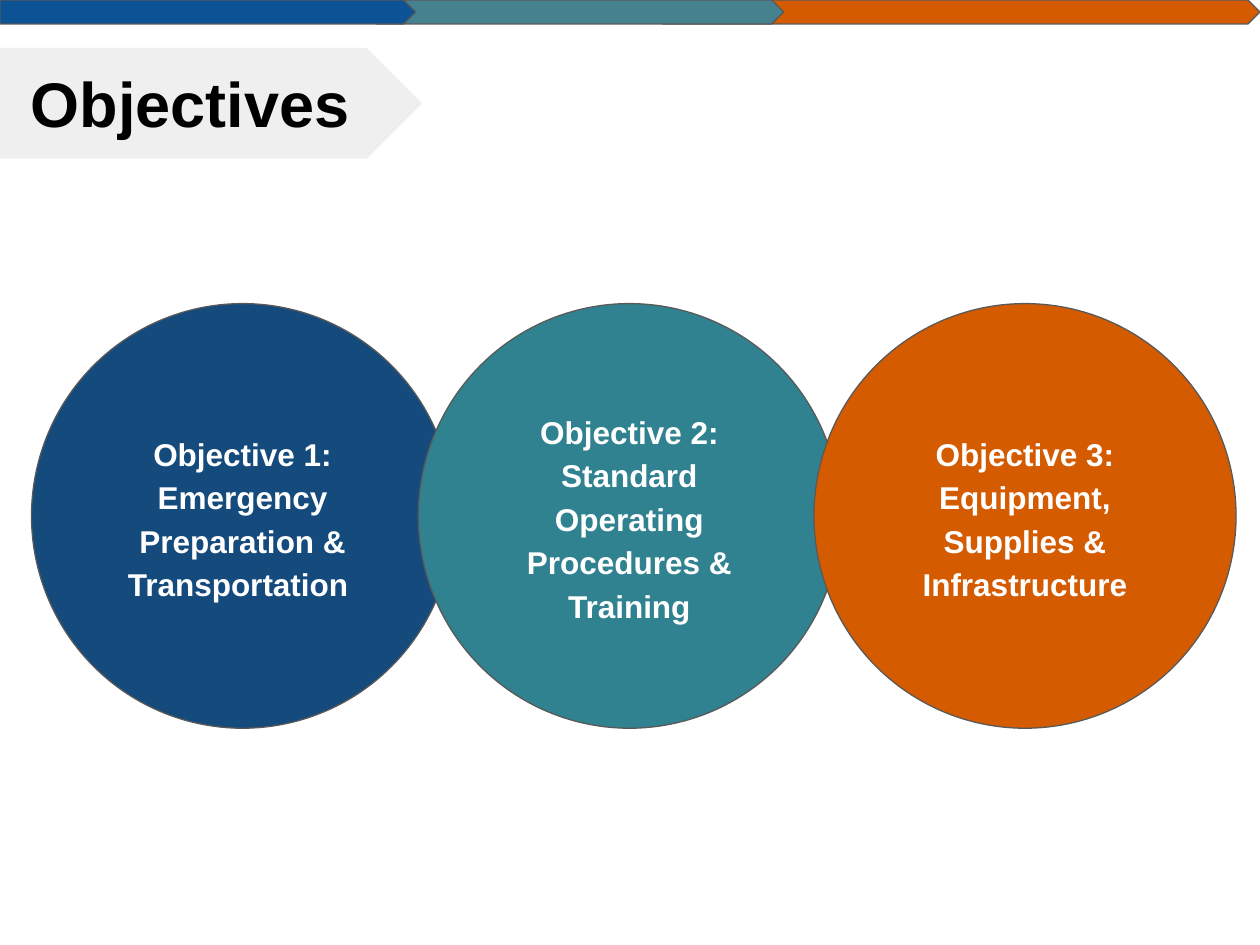
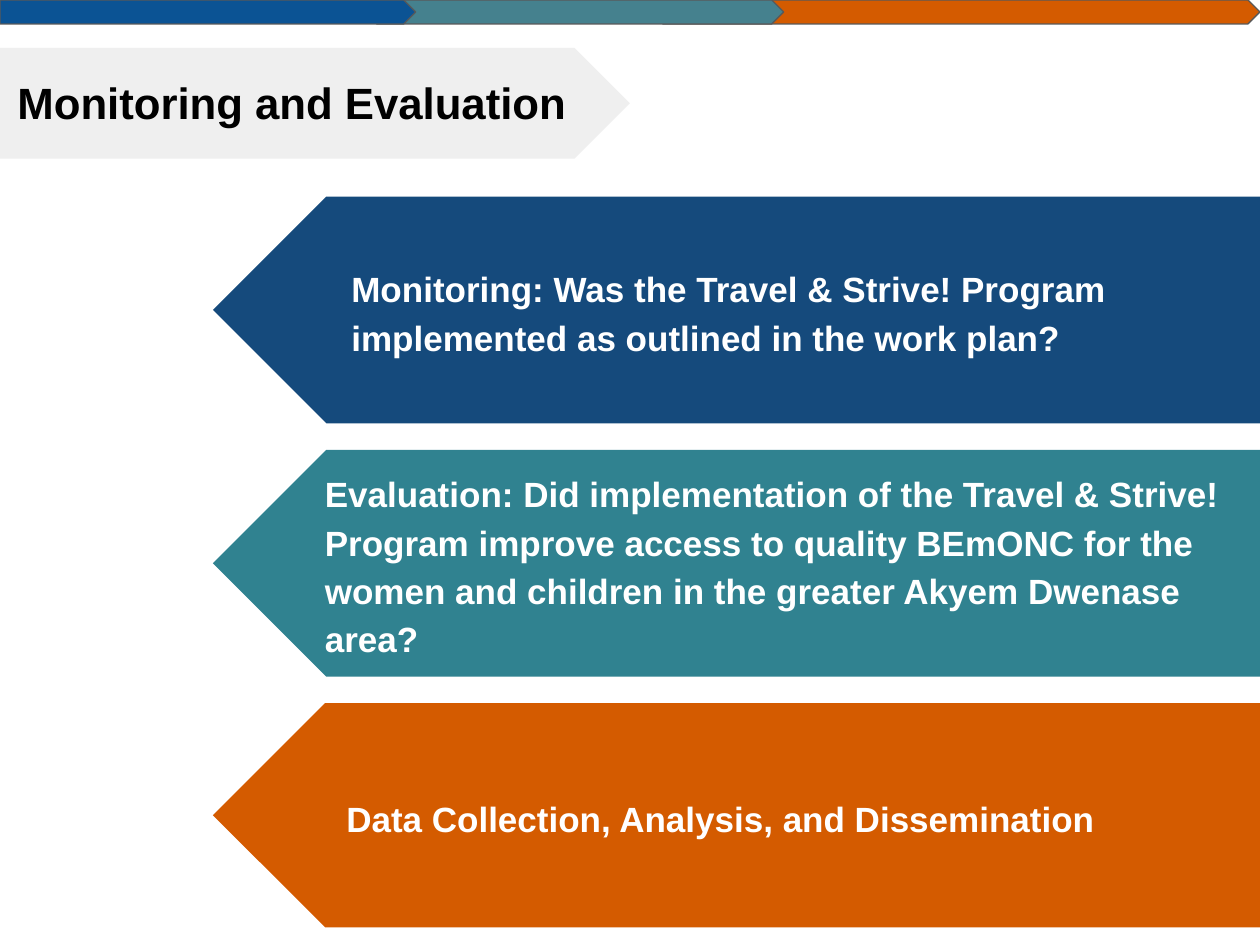
from pptx import Presentation
from pptx.dml.color import RGBColor as RGB
from pptx.enum.shapes import MSO_SHAPE as Kind
from pptx.enum.text import MSO_ANCHOR as Anchor, PP_ALIGN as Align
from pptx.util import Emu, Pt

SCALE = 9144
WIDE, HIGH = 1000, 750
INSET = 10
FONT = "Arial"

WHITE = RGB(0xFF, 0xFF, 0xFF)
BLACK = RGB(0x00, 0x00, 0x00)
PALE = RGB(0xEF, 0xEF, 0xEF)
EDGE = RGB(0x59, 0x59, 0x59)
NAVY = RGB(0x15, 0x4A, 0x7C)
TEAL = RGB(0x30, 0x82, 0x90)
RUST = RGB(0xD4, 0x5B, 0x00)
BLUE = RGB(0x0B, 0x53, 0x94)
SEA = RGB(0x45, 0x81, 0x8E)

STRIP = [
    (Kind.PENTAGON, 526, 474, RUST),
    (Kind.CHEVRON, 299, 323, SEA),
    (Kind.PENTAGON, 0, 330, BLUE),
]
GOALS = [
    (25, NAVY, "Objective 1: Emergency Preparation & Transportation "),
    (332, TEAL, "Objective 2: Standard Operating Procedures & Training"),
    (646, RUST, "Objective 3: Equipment, Supplies & Infrastructure"),
]
CHECKS = [
    (180, 100, NAVY, "Monitoring: Was the Travel & Strive! Program "
     "implemented as outlined in the work plan?"),
    (180, 79, TEAL, "Evaluation: Did implementation of the Travel & Strive! "
     "Program improve access to quality BEmONC for the women and children "
     "in the greater Akyem Dwenase area?"),
    (178, 96, RUST, "Data Collection, Analysis, and Dissemination"),
]


def px(*sizes):
    return [Emu(size * SCALE) for size in sizes]


def draw(shapes, kind, box, fill, line=None):
    shape = shapes.add_shape(kind, *px(*box))
    shape.shadow.inherit = False
    shape.fill.solid()
    shape.fill.fore_color.rgb = fill
    if line is None:
        shape.line.fill.background()
    else:
        shape.line.color.rgb = line
        shape.line.width = Pt(0.75)
    return shape


def write(shape, text, size=20, color=WHITE, align=Align.LEFT, space=1.15):
    frame = shape.text_frame
    frame.word_wrap = True
    frame.vertical_anchor = Anchor.MIDDLE
    inset, = px(INSET)
    frame.margin_left = frame.margin_right = inset
    frame.margin_top = frame.margin_bottom = inset
    para = frame.paragraphs[0]
    para.alignment = align
    para.line_spacing = space
    run = para.add_run()
    run.text = text
    run.font.name = FONT
    run.font.size = Pt(size)
    run.font.bold = True
    run.font.color.rgb = color


def label(shapes, box, text, **style):
    write(shapes.add_textbox(*px(*box)), text, **style)


def banner(shapes, box, text, width, **style):
    left, top, wide, high = box
    draw(shapes, Kind.PENTAGON, box, PALE)
    label(shapes, (left + 4, top - 1, width, high), text,
          color=BLACK, space=1.0, **style)


def strip(shapes, box):
    left, top, _, high = box
    for kind, shift, wide, fill in STRIP:
        draw(shapes, kind, (left + shift, top, wide, high), fill, EDGE)


def circles(shapes, box):
    start, top, wide, high = box
    for shift, fill, text in GOALS:
        spot = (start + shift, top, wide, high)
        disc = draw(shapes, Kind.OVAL, spot, fill, EDGE)
        write(disc, text, size=18, align=Align.CENTER)


def arrows(shapes, box, pitch):
    left, top, wide = box
    for row, (high, shift, fill, text) in enumerate(CHECKS):
        level = top + row * pitch
        group = shapes.add_group_shape().shapes
        arrow = draw(group, Kind.PENTAGON, (left, level, wide, high), fill)
        arrow.rotation = 180
        label(group, (left + shift, level, wide - shift, high), text)


def goals(shapes):
    banner(shapes, (0, 38, 335, 88), "Objectives", 294,
           size=36, align=Align.CENTER)
    circles(shapes, (0, 241, 335, 337))


def review(shapes):
    banner(shapes, (0, 38, 500, 88), "Monitoring and Evaluation", 515, size=25)
    arrows(shapes, (169, 156, 833), 201)


def main():
    deck = Presentation()
    deck.slide_width, deck.slide_height = px(WIDE, HIGH)
    for fill_in in (goals, review):
        shapes = deck.slides.add_slide(deck.slide_layouts[6]).shapes
        fill_in(shapes)
        strip(shapes, (0, 0, WIDE, 19))
    deck.save("out.pptx")


if __name__ == "__main__":
    main()
